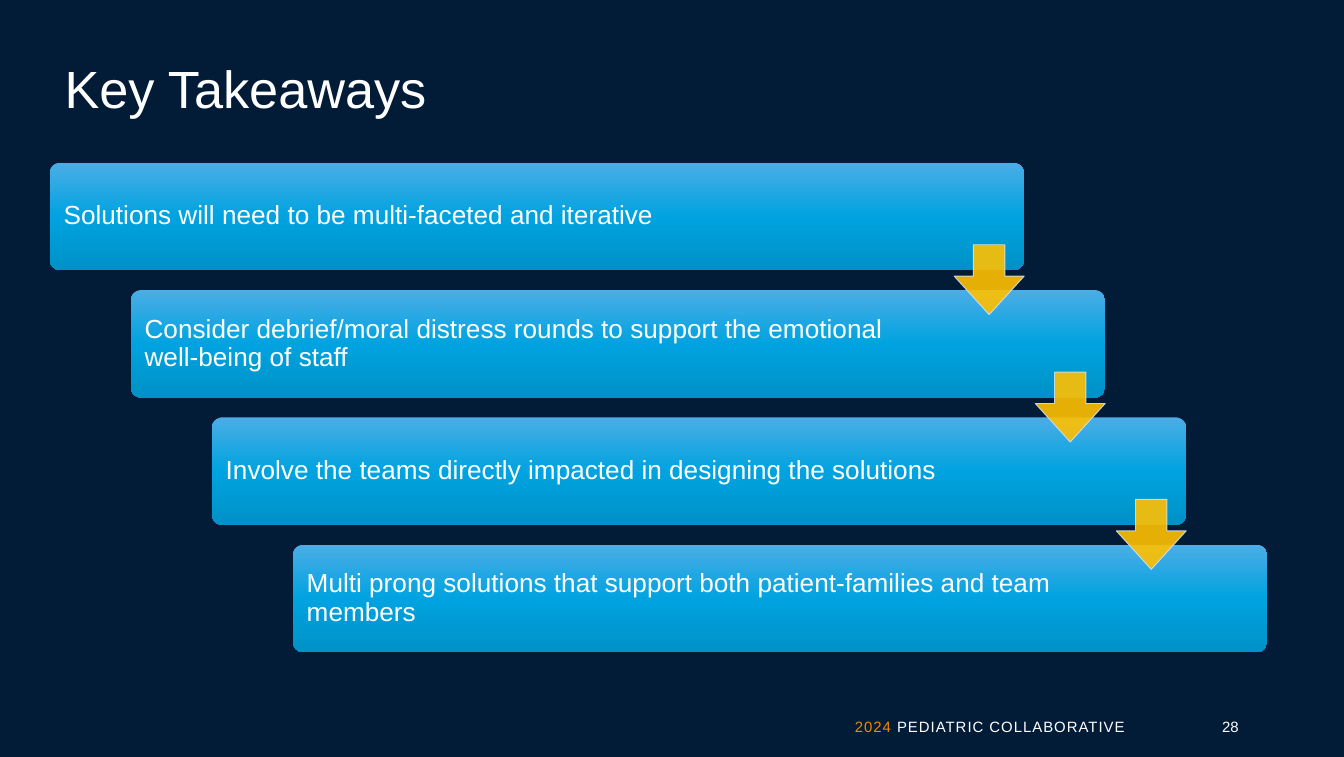
from copy import deepcopy

from pptx import Presentation
from pptx.dml.color import RGBColor
from pptx.enum.shapes import MSO_SHAPE
from pptx.enum.text import MSO_ANCHOR, MSO_AUTO_SIZE, PP_ALIGN
from pptx.oxml.ns import qn
from pptx.oxml.xmlchemy import OxmlElement
from pptx.util import Inches, Pt

BAR, ARROW = MSO_SHAPE.ROUNDED_RECTANGLE, MSO_SHAPE.DOWN_ARROW
TOP, MIDDLE = MSO_ANCHOR.TOP, MSO_ANCHOR.MIDDLE
LEFT, CENTER, RIGHT = PP_ALIGN.LEFT, PP_ALIGN.CENTER, PP_ALIGN.RIGHT
NO_FIT = MSO_AUTO_SIZE.NONE

TAKEAWAYS = [
    "Solutions will need to be multi-faceted and iterative",
    "Consider debrief/moral distress rounds to support the emotional well-being of staff",
    "Involve the teams directly impacted in designing the solutions",
    "Multi prong solutions that support both patient-families and team members",
]
GRADIENT = [(0, "4BADE6"), (0.5, "00A3E0"), (1, "0091C7")]
BAR_W, BAR_H, ARROW_SIZE = 7.25, 0.8, 0.52
STEP_X, STEP_Y = 0.603, 0.947


def rgb(value):
    return RGBColor.from_string(value)


def add_text(tf, parts, size, align, anchor, insets, spacing):
    tf.word_wrap = True
    tf.auto_size = NO_FIT
    tf.vertical_anchor = anchor
    tf.margin_left, tf.margin_top, tf.margin_right, tf.margin_bottom = map(Inches, insets)
    p = tf.paragraphs[0]
    p.alignment = align
    p.line_spacing = spacing
    p.font.size = Pt(size)
    p.font.name = "Arial"
    for text, color in parts:
        r = p.add_run()
        r.text = text
        r.font.color.rgb = rgb(color)
    return p


prs = Presentation()
prs.slide_width, prs.slide_height = Inches(10), Inches(5.63)
slide = prs.slides.add_slide(prs.slide_layouts[5])
slide.background.fill.solid()
slide.background.fill.fore_color.rgb = rgb("021C37")

title = slide.shapes.title
title.left, title.top, title.width, title.height = map(Inches, (0.48, 0.47, 9.06, 0.94))
add_text(title.text_frame, [("Key Takeaways", "FFFFFF")], 28, LEFT, TOP, (0, 0, 0, 0.1), 0.9)

for i, text in enumerate(TAKEAWAYS):
    s = slide.shapes.add_shape(BAR, Inches(0.37 + i * STEP_X), Inches(1.21 + i * STEP_Y),
                               Inches(BAR_W), Inches(BAR_H))
    s.shadow.inherit = False
    s.adjustments[0] = 0.1
    s.line.fill.background()
    s.fill.gradient()
    s.fill.gradient_angle = 270
    stops = s._element.spPr.find(".//" + qn("a:gsLst"))
    stops.append(deepcopy(stops[-1]))
    for stop, (position, color) in zip(s.fill.gradient_stops, GRADIENT):
        stop.position = position
        stop.color.rgb = rgb(color)
    add_text(s.text_frame, [(text, "FFFFFF")], 14, LEFT, MIDDLE, (0.08, 0.08, 1.2, 0.08), 0.9)

for i in range(len(TAKEAWAYS) - 1):
    s = slide.shapes.add_shape(ARROW, Inches(7.1 + i * STEP_X), Inches(1.82 + i * STEP_Y),
                               Inches(ARROW_SIZE), Inches(ARROW_SIZE))
    s.shadow.inherit = False
    s.adjustments[0], s.adjustments[1] = 0.45, 0.55
    s.fill.solid()
    s.fill.fore_color.rgb = rgb("FFC000")
    s.line.color.rgb = rgb("CCE0F3")
    s.line.width = Pt(0.5)
    for color in s._element.spPr.iter(qn("a:srgbClr")):
        alpha = OxmlElement("a:alpha")
        alpha.set("val", "90000")
        color.append(alpha)

footer = slide.shapes.add_textbox(Inches(5.99), Inches(5.26), Inches(2.48), Inches(0.25))
p = add_text(footer.text_frame, [("2024", "ED8B00"), (" PEDIATRIC COLLABORATIVE", "FFFFFF")],
             8, RIGHT, TOP, (0.1, 0.05, 0.1, 0.05), 1.2)
for r in p.runs:
    r.font._element.set("spc", "50")

number = slide.shapes.add_textbox(Inches(8.94), Inches(5.26), Inches(0.43), Inches(0.26))
add_text(number.text_frame, [("28", "FFFFFF")], 8, CENTER, TOP, (0.1, 0.05, 0.1, 0), 1.2)

for s in (0.55, 0.45)[:0]:
    pass

prs.save("out.pptx")
